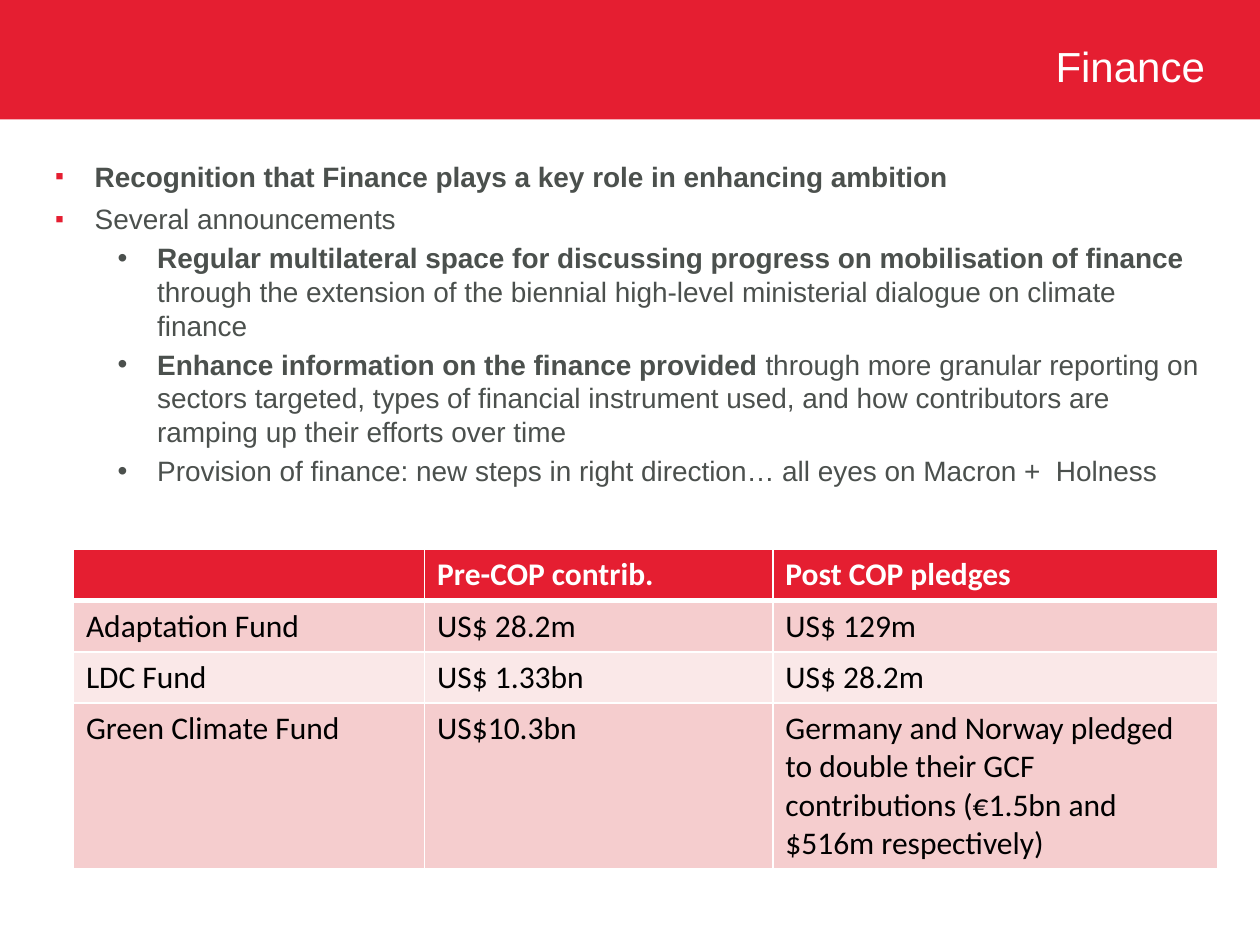
from lxml.etree import SubElement
from pptx import Presentation
from pptx.dml.color import RGBColor
from pptx.enum.shapes import MSO_SHAPE
from pptx.enum.text import MSO_ANCHOR, PP_ALIGN
from pptx.oxml.ns import qn
from pptx.util import Cm, Pt

RED = RGBColor(0xE5, 0x1E, 0x31)
GREY = RGBColor(0x4B, 0x50, 0x4D)
WHITE = RGBColor(0xFF, 0xFF, 0xFF)
BLACK = RGBColor(0x00, 0x00, 0x00)
ROSE = RGBColor(0xF5, 0xCD, 0xCE)
BLUSH = RGBColor(0xFA, 0xE8, 0xE8)

BULLETS = [
    (0, "Recognition that Finance plays a key role in enhancing ambition", ""),
    (0, "", "Several announcements"),
    (1, "Regular multilateral space for discussing progress on mobilisation of finance ",
     "through the extension of the biennial high-level ministerial dialogue on climate finance"),
    (1, "Enhance information on the finance provided ",
     "through more granular reporting on sectors targeted, types of financial instrument used, "
     "and how contributors are ramping up their efforts over time"),
    (1, "", "Provision of finance: new steps in right direction… all eyes on Macron +  Holness"),
]
LEVELS = [
    {"indent": 0.8, "symbol": "▪", "color": RED, "percent": 90, "spacing": 1.1},
    {"indent": 2.06, "symbol": "•", "color": GREY, "percent": 100, "spacing": 1.0},
]
FUNDS = [
    ["", "Pre-COP contrib.", "Post COP pledges"],
    ["Adaptation Fund", "US$ 28.2m", "US$ 129m"],
    ["LDC Fund", "US$ 1.33bn", "US$ 28.2m"],
    ["Green Climate Fund", "US$10.3bn",
     "Germany and Norway pledged to double their GCF contributions "
     "(€1.5bn and $516m respectively)"],
]


class SlideBuilder:
    title_style = {"name": "Arial", "size": Pt(24), "color": WHITE}
    body_style = {"name": "Arial", "size": Pt(16), "color": GREY}
    header_style = {"name": "Calibri", "size": Pt(18), "color": WHITE, "bold": True}
    cell_style = {"name": "Calibri", "size": Pt(18), "color": BLACK, "bold": False}

    def __init__(self, page):
        self.page = page

    def add_span(self, para, text, style):
        span = para.add_run()
        span.text = text
        for key, value in style.items():
            if key == "color":
                span.font.color.rgb = value
            else:
                setattr(span.font, key, value)

    def band(self, left, top, width, height, color):
        shape = self.page.shapes.add_shape(
            MSO_SHAPE.RECTANGLE, Cm(left), Cm(top), Cm(width), Cm(height))
        shape.shadow.inherit = False
        shape.fill.solid()
        shape.fill.fore_color.rgb = color
        shape.line.fill.background()

    def text_frame(self, left, top, width, height):
        box = self.page.shapes.add_textbox(Cm(left), Cm(top), Cm(width), Cm(height))
        box.text_frame.word_wrap = True
        return box.text_frame

    def title(self, text, *area):
        frame = self.text_frame(*area)
        frame.vertical_anchor = MSO_ANCHOR.MIDDLE
        para = frame.paragraphs[0]
        para.alignment = PP_ALIGN.RIGHT
        self.add_span(para, text, self.title_style)

    def bullet(self, para, indent, symbol, color, percent, spacing):
        properties = para._p.get_or_add_pPr()
        properties.set("marL", str(Cm(indent)))
        properties.set("indent", str(-Cm(0.8)))
        tint = SubElement(properties, qn("a:buClr"))
        SubElement(tint, qn("a:srgbClr"), val=str(color))
        SubElement(properties, qn("a:buSzPct"), val=str(percent * 1000))
        SubElement(properties, qn("a:buFont"), typeface="Arial")
        SubElement(properties, qn("a:buChar"), char=symbol)
        para.line_spacing = spacing

    def bullets(self, items, *area):
        frame = self.text_frame(*area)
        for index, (level, strong, plain) in enumerate(items):
            para = frame.add_paragraph() if index else frame.paragraphs[0]
            para.level = level
            self.bullet(para, **LEVELS[level])
            if index:
                para.space_before = Pt(3.2)
            for text, bold in ((strong, True), (plain, False)):
                if text:
                    self.add_span(para, text, {**self.body_style, "bold": bold})

    def borders(self, cell, widths):
        properties = cell._tc.get_or_add_tcPr()
        for side, width in widths.items():
            line = SubElement(properties, qn(f"a:ln{side}"), w=str(Pt(width)))
            fill = SubElement(line, qn("a:solidFill"))
            SubElement(fill, qn("a:srgbClr"), val=str(WHITE))

    def table(self, rows, left, top, widths, heights):
        table = self.page.shapes.add_table(
            len(rows), len(widths), Cm(left), Cm(top),
            Cm(sum(widths)), Cm(sum(heights))).table
        for column, width in zip(table.columns, widths):
            column.width = Cm(width)
        for number, (row, height) in enumerate(zip(rows, heights)):
            table.rows[number].height = Cm(height)
            color = (ROSE if number % 2 else BLUSH) if number else RED
            style = self.cell_style if number else self.header_style
            thick = {"T": 1 if number != 1 else 3, "B": 1 if number else 3}
            for position, text in enumerate(row):
                cell = table.cell(number, position)
                self.borders(cell, {"L": 1, "R": 1, **thick})
                cell.fill.solid()
                cell.fill.fore_color.rgb = color
                if text:
                    self.add_span(cell.text_frame.paragraphs[0], text, style)


def main():
    deck = Presentation()
    deck.slide_width, deck.slide_height = Cm(25.4), Cm(19.05)
    builder = SlideBuilder(deck.slides.add_slide(deck.slide_layouts[6]))
    builder.band(0, 0, 25.4, 2.41, RED)
    builder.bullets(BULLETS, 0.86, 3.02, 23.83, 14.12)
    builder.title("Finance", 5.11, 0.81, 19.43, 1.02)
    builder.table(FUNDS, 1.48, 11.08, [7.08, 7.02, 8.96], [1.03, 1.03, 1.03, 3.35])
    deck.save("out.pptx")


if __name__ == "__main__":
    main()
